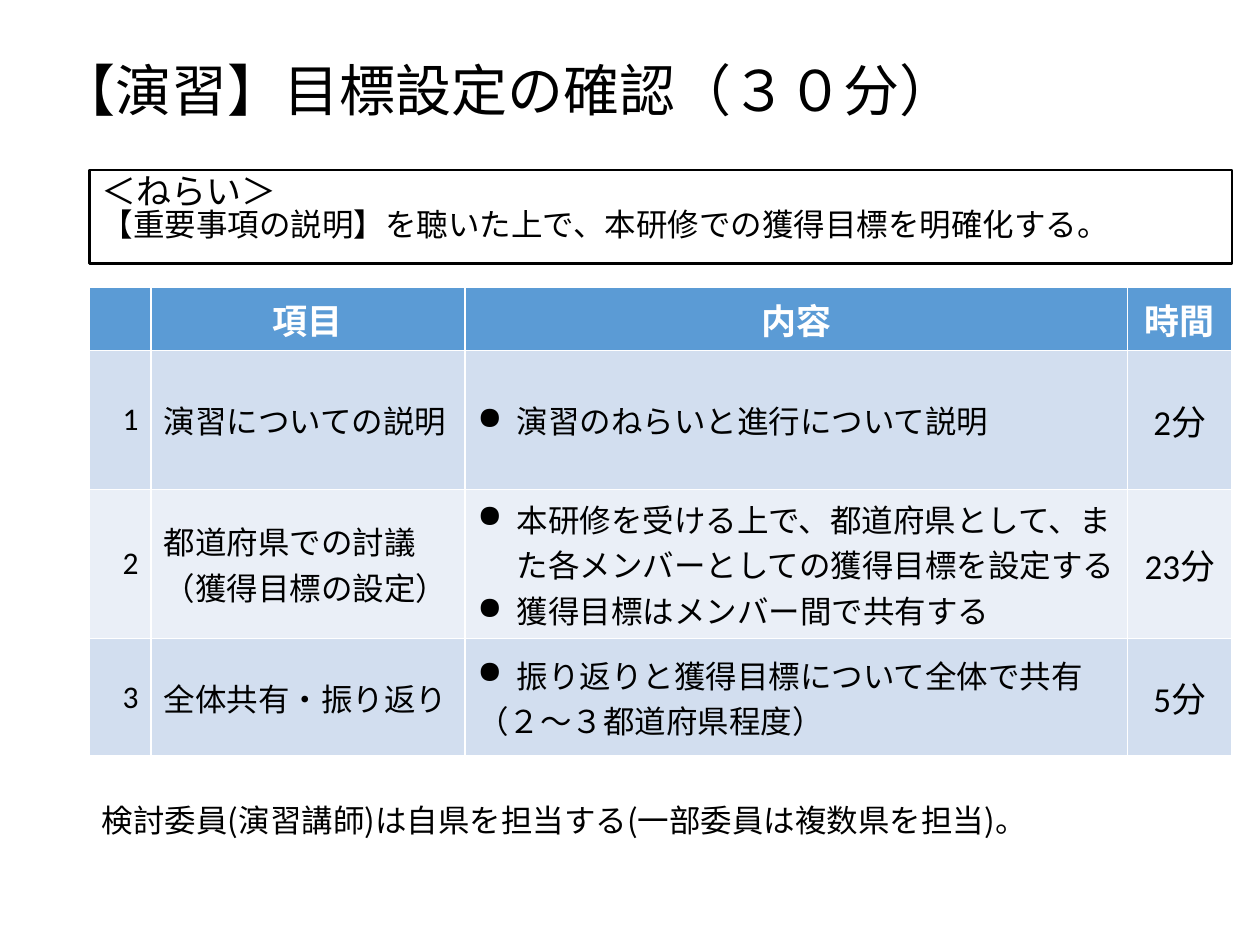
from dataclasses import dataclass

from lxml.etree import SubElement
from pptx import Presentation
from pptx.dml.color import RGBColor
from pptx.enum.shapes import MSO_SHAPE
from pptx.enum.text import MSO_ANCHOR, MSO_AUTO_SIZE, PP_ALIGN
from pptx.oxml.ns import qn
from pptx.util import Inches, Pt

BLACK = RGBColor(0x00, 0x00, 0x00)
WHITE = RGBColor(0xFF, 0xFF, 0xFF)
HEADER_BLUE = RGBColor(0x5B, 0x9B, 0xD5)
BAND_DARK = RGBColor(0xD2, 0xDE, 0xEF)
BAND_LIGHT = RGBColor(0xEA, 0xEF, 0xF7)

LATIN_FONT = "Calibri"
JAPANESE_FONT = "Noto Sans CJK JP"
BULLET = "●"
COMPACT_SPACING = 0.84

LEFT = Inches(0.71)
CONTENT_WIDTH = Inches(9.07)
COLUMN_WIDTHS = (0.49, 2.49, 5.26, 0.83)
ROW_HEIGHTS = (0.24, 1.1, 1.01, 0.93)
COLUMN_ALIGNS = (PP_ALIGN.RIGHT, PP_ALIGN.LEFT, PP_ALIGN.LEFT, PP_ALIGN.CENTER)
COLUMN_SIZES = (18, 18, 18, 20)
HEADINGS = ("", "項目", "内容", "時間")


@dataclass
class Line:
    text: str
    size: float = 18
    bulleted: bool = False


@dataclass
class AgendaRow:
    items: list[str]
    details: list[Line]
    time: str


AGENDA = [
    AgendaRow(
        ["演習についての説明"],
        [Line("演習のねらいと進行について説明", bulleted=True)],
        "2分",
    ),
    AgendaRow(
        ["都道府県での討議", "（獲得目標の設定）"],
        [
            Line("本研修を受ける上で、都道府県として、また各メンバーとしての獲得目標を設定する", bulleted=True),
            Line("獲得目標はメンバー間で共有する", bulleted=True),
        ],
        "23分",
    ),
    AgendaRow(
        ["全体共有・振り返り"],
        [
            Line("振り返りと獲得目標について全体で共有", bulleted=True),
            Line("（２～３都道府県程度）"),
        ],
        "5分",
    ),
]


def format_span(span, size: float, font_name: str, color: RGBColor = BLACK, bold: bool = False) -> None:
    span.font.size = Pt(size)
    span.font.bold = bold
    span.font.color.rgb = color
    span.font.name = font_name
    SubElement(span.font._element, qn("a:ea")).set("typeface", JAPANESE_FONT)


def add_bullet(para) -> None:
    properties = para._p.get_or_add_pPr()
    indent = Inches(0.31)
    properties.set("marL", str(indent))
    properties.set("indent", str(-indent))
    SubElement(properties, qn("a:buChar")).set("char", BULLET)


def write_lines(frame, lines: list[Line], font_name: str, align=PP_ALIGN.LEFT,
                color: RGBColor = BLACK, bold: bool = False, spacing: float | None = None) -> None:
    frame.text = "\n".join(line.text for line in lines)
    for para, line in zip(frame.paragraphs, lines):
        para.alignment = align
        if spacing:
            para.line_spacing = spacing
        if line.bulleted:
            add_bullet(para)
        for span in para.runs:
            format_span(span, line.size, font_name, color, bold)


def fill_cell(cell, fill: RGBColor, lines: list[Line], **style) -> None:
    cell.fill.solid()
    cell.fill.fore_color.rgb = fill
    write_lines(cell.text_frame, lines, LATIN_FONT, **style)


def add_title(page) -> None:
    title = page.shapes.title
    title.left, title.top, title.width, title.height = map(Inches, (0.37, 0.51, 9, 0.46))
    frame = title.text_frame
    frame.auto_size = MSO_AUTO_SIZE.NONE
    frame.vertical_anchor = MSO_ANCHOR.MIDDLE
    write_lines(frame, [Line("【演習】目標設定の確認（３０分）", 32)], JAPANESE_FONT, spacing=0.9)


def add_aim_box(page) -> None:
    box = page.shapes.add_shape(MSO_SHAPE.RECTANGLE, LEFT, Inches(1.35), CONTENT_WIDTH, Inches(0.74))
    box.shadow.inherit = False
    box.fill.background()
    box.line.color.rgb = BLACK
    box.line.width = Pt(1.5)
    frame = box.text_frame
    frame.word_wrap = True
    frame.vertical_anchor = MSO_ANCHOR.TOP
    lines = [
        Line("＜ねらい＞", 20),
        Line("【重要事項の説明】を聴いた上で、本研修での獲得目標を明確化する。"),
    ]
    write_lines(frame, lines, JAPANESE_FONT, spacing=COMPACT_SPACING)


def add_agenda_table(page) -> None:
    holder = page.shapes.add_table(
        len(ROW_HEIGHTS), len(COLUMN_WIDTHS), LEFT, Inches(2.28), CONTENT_WIDTH, Inches(3.77)
    )
    table = holder.table
    for column, width in zip(table.columns, COLUMN_WIDTHS):
        column.width = Inches(width)
    for row, height in zip(table.rows, ROW_HEIGHTS):
        row.height = Inches(height)
    holder.height = Inches(3.77)

    for column, heading in enumerate(HEADINGS):
        fill_cell(table.cell(0, column), HEADER_BLUE, [Line(heading, 20)],
                  align=PP_ALIGN.CENTER, color=WHITE, bold=True)
    for number, entry in enumerate(AGENDA, start=1):
        fill = BAND_DARK if number % 2 else BAND_LIGHT
        contents = (
            [Line(str(number))],
            [Line(item) for item in entry.items],
            entry.details,
            [Line(entry.time, COLUMN_SIZES[3])],
        )
        for column, (lines, align) in enumerate(zip(contents, COLUMN_ALIGNS)):
            cell = table.cell(number, column)
            cell.vertical_anchor = MSO_ANCHOR.MIDDLE
            fill_cell(cell, fill, lines, align=align)


def add_note(page) -> None:
    box = page.shapes.add_textbox(LEFT, Inches(6.36), Inches(7.65), Inches(0.4))
    box.text_frame.word_wrap = True
    note = Line("検討委員(演習講師)は自県を担当する(一部委員は複数県を担当)。")
    write_lines(box.text_frame, [note], JAPANESE_FONT, spacing=COMPACT_SPACING)


def main() -> None:
    deck = Presentation()
    deck.slide_width, deck.slide_height = Inches(10), Inches(7.5)
    page = deck.slides.add_slide(deck.slide_layouts.get_by_name("Title Only"))
    add_title(page)
    add_agenda_table(page)
    add_aim_box(page)
    add_note(page)
    deck.save("out.pptx")


if __name__ == "__main__":
    main()
